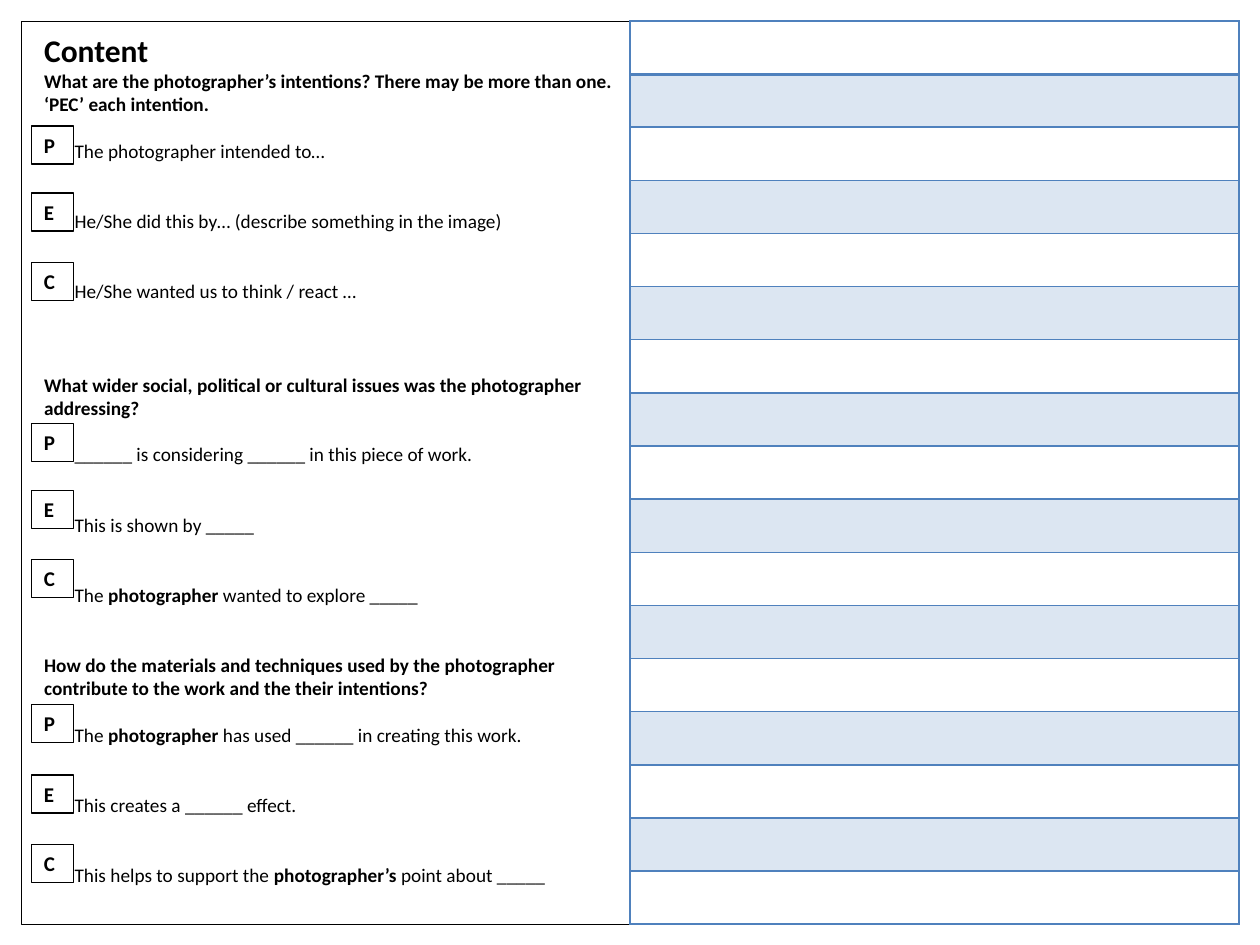
from lxml import etree
from pptx import Presentation
from pptx.dml.color import RGBColor
from pptx.enum.shapes import MSO_SHAPE
from pptx.enum.text import MSO_ANCHOR, MSO_AUTO_SIZE, PP_ALIGN
from pptx.oxml.ns import qn
from pptx.util import Pt

RECTANGLE = MSO_SHAPE.RECTANGLE
TOP = MSO_ANCHOR.TOP
NO_AUTOFIT = MSO_AUTO_SIZE.NONE
LEFT = PP_ALIGN.LEFT

COLORS = {"ink": "000000", "border": "4F81BD", "band": "DCE6F2"}
FONT = "Calibri"
TITLE = "Content"

SECTIONS = [
    {
        "question": ["What are the photographer’s intentions? There may be more than one. "
                     "‘PEC’ each intention."],
        "prompts": [
            [("The photographer intended to…", False)],
            [("He/She did this by… (describe something in the image)", False)],
            [("He/She wanted us to think / react …", False)],
        ],
        "badge_tops": [72, 110.2, 149.8],
        "blank_lines": 0,
    },
    {
        "question": ["What wider social, political or cultural issues was the photographer",
                     "addressing?"],
        "prompts": [
            [("______ is considering ______ in this piece of work.", False)],
            [("This is shown by _____", False)],
            [("The ", False), ("photographer ", True), ("wanted to explore _____", False)],
        ],
        "badge_tops": [241.9, 280.1, 319.7],
        "blank_lines": 3,
    },
    {
        "question": ["How do the materials and techniques used by the photographer",
                     "contribute to the work and the their intentions?"],
        "prompts": [
            [("The ", False), ("photographer ", True),
             ("has used ______ in creating this work.", False)],
            [("This creates a ______ effect.", False)],
            [("This helps to support the ", False), ("photographer’s ", True),
             ("point about _____", False)],
        ],
        "badge_tops": [402.5, 442.8, 482.4],
        "blank_lines": 2,
    },
]
BADGES = "PEC"

FRAME_LEFT, FRAME_TOP, FRAME_WIDTH, FRAME_HEIGHT = 12, 12, 348, 516.2
TEXT_LEFT = 18
LINE_HEIGHT = 13.43
PROMPT_INDENT = 17.4
ROW_COUNT = 17


def color(name):
    return RGBColor.from_string(COLORS[name])


def place(shape, left, top, width, height):
    shape.left, shape.top = Pt(left), Pt(top)
    shape.width, shape.height = Pt(width), Pt(height)


def add_run(paragraph, text, size, bold):
    run = paragraph.add_run()
    run.text = text
    run.font.name = FONT
    run.font.size = Pt(size)
    run.font.bold = bold
    run.font.color.rgb = color("ink")


def add_box(slide, left, top, width, height, line_width):
    shape = slide.shapes.add_shape(RECTANGLE, Pt(left), Pt(top), Pt(width), Pt(height))
    shape.shadow.inherit = False
    shape.fill.background()
    shape.line.color.rgb = color("ink")
    shape.line.width = Pt(line_width)
    return shape


def prepare_frame(shape, wrap):
    frame = shape.text_frame
    frame.word_wrap = wrap
    frame.auto_size = NO_AUTOFIT
    frame.vertical_anchor = TOP
    return frame


def add_body_line(frame, runs, blank_lines, indent):
    first = not frame.paragraphs[0].runs
    paragraph = frame.paragraphs[0] if first else frame.add_paragraph()
    properties = paragraph._p.get_or_add_pPr()
    properties.set("marL", str(Pt(indent)))
    properties.set("indent", "0")
    etree.SubElement(properties, qn("a:buNone"))
    paragraph.alignment = LEFT
    paragraph.line_spacing = 1.0
    paragraph.space_before = Pt(round(blank_lines * LINE_HEIGHT, 2))
    for text, bold in runs:
        add_run(paragraph, text, 11, bold)


def add_border(cell, side, width):
    line = etree.SubElement(cell._tc.get_or_add_tcPr(), qn(f"a:{side}"), w=str(Pt(width)))
    fill = etree.SubElement(line, qn("a:solidFill"))
    etree.SubElement(fill, qn("a:srgbClr"), val=COLORS["border"])


def add_title(slide):
    title = slide.shapes.title
    place(title, TEXT_LEFT, FRAME_TOP, 338.4, 31)
    paragraph = prepare_frame(title, True).paragraphs[0]
    paragraph.alignment = LEFT
    paragraph.line_spacing = 1.1
    add_run(paragraph, TITLE, 18, True)


def add_questions(slide):
    body = slide.placeholders[1]
    place(body, TEXT_LEFT, 36, FRAME_WIDTH, 480)
    frame = prepare_frame(body, True)
    for section in SECTIONS:
        for index, line in enumerate(section["question"]):
            blank_lines = 0 if index else section["blank_lines"]
            add_body_line(frame, [(line, True)], blank_lines, 0)
        for index, runs in enumerate(section["prompts"]):
            add_body_line(frame, runs, 2 if index else 1, PROMPT_INDENT)


def add_badges(slide):
    for section in SECTIONS:
        for letter, top in zip(BADGES, section["badge_tops"]):
            badge = add_box(slide, TEXT_LEFT, top, 24, 21.8, 0.75)
            paragraph = prepare_frame(badge, False).paragraphs[0]
            paragraph.alignment = LEFT
            add_run(paragraph, letter, 12, True)


def add_answer_table(slide):
    graphic = slide.shapes.add_table(ROW_COUNT, 1, Pt(FRAME_LEFT + FRAME_WIDTH), Pt(FRAME_TOP),
                                     Pt(FRAME_WIDTH), Pt(FRAME_HEIGHT))
    table = graphic.table
    table.first_row = False
    table.horz_banding = False
    for index, row in enumerate(table.rows):
        row.height = Pt(FRAME_HEIGHT / ROW_COUNT)
        cell = row.cells[0]
        widths = {"lnL": 1, "lnR": 1, "lnT": 2 if index == 1 else 1, "lnB": 2 if index == 0 else 1}
        for side, width in widths.items():
            add_border(cell, side, width)
        if index % 2:
            cell.fill.solid()
            cell.fill.fore_color.rgb = color("band")
        else:
            cell.fill.background()


def main():
    presentation = Presentation()
    presentation.slide_width, presentation.slide_height = Pt(720), Pt(540)
    slide = presentation.slides.add_slide(presentation.slide_layouts[1])
    add_title(slide)
    for column in range(2):
        add_box(slide, FRAME_LEFT + column * FRAME_WIDTH, FRAME_TOP,
                FRAME_WIDTH, FRAME_HEIGHT, 0.25)
    add_questions(slide)
    add_badges(slide)
    add_answer_table(slide)
    presentation.save("out.pptx")


if __name__ == "__main__":
    main()
